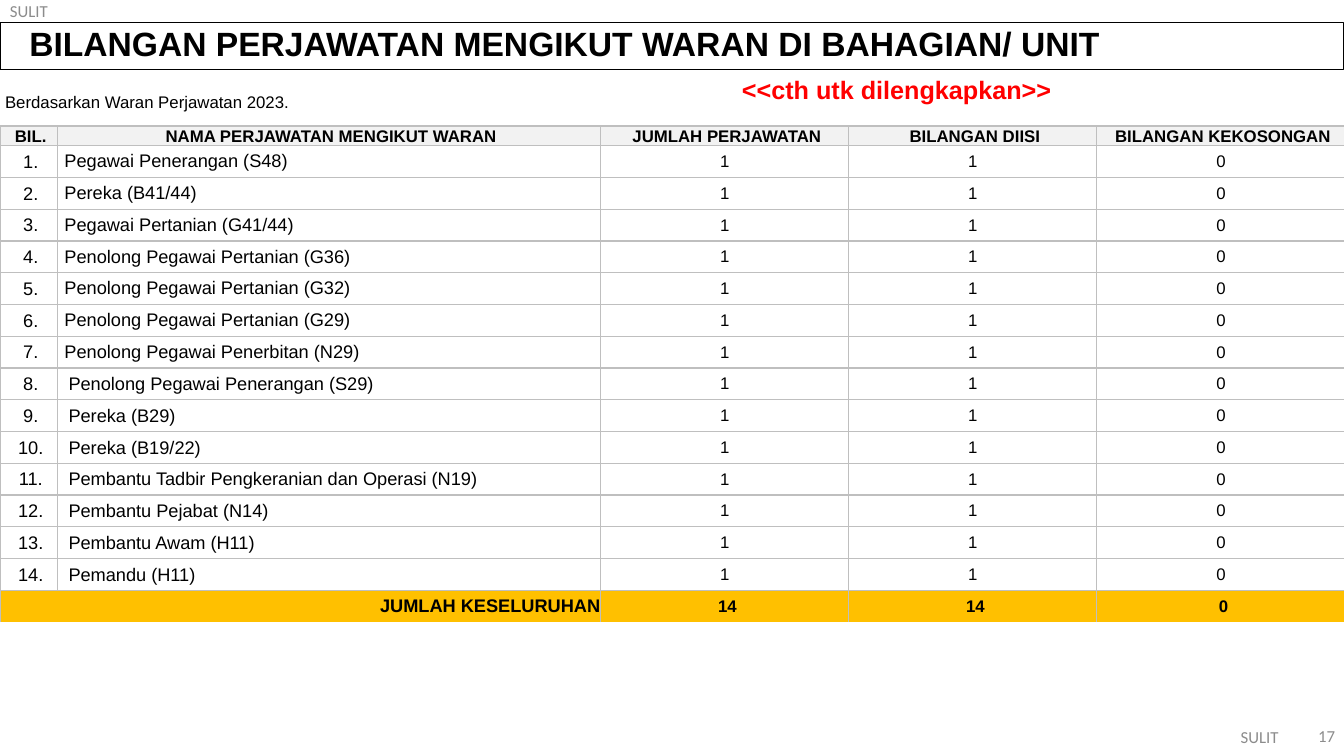
from dataclasses import dataclass, field, replace
from typing import Any

from lxml.etree import SubElement, Element
from pptx import Presentation
from pptx.dml.color import RGBColor as RGB
from pptx.enum.text import MSO_ANCHOR as Anchor, MSO_AUTO_SIZE as AutoSize, PP_ALIGN as Align
from pptx.oxml.ns import qn
from pptx.util import Inches, Pt


@dataclass(frozen=True)
class Theme:
    body_font: str = "Arial"
    mark_font: str = "Calibri"
    black: str = "000000"
    grey: str = "8C8C8C"
    red: str = "FF0000"
    border: str = "BFBFBF"
    white: str = "FFFFFF"
    header_fill: str = "F2F2F2"
    total_fill: str = "FFC000"
    title_size: int = 24
    note_size: int = 18
    name_size: int = 13
    text_size: int = 12


THEME = Theme()


@dataclass(frozen=True)
class TextStyle:
    size: int = THEME.text_size
    font: str = THEME.body_font
    color: str = THEME.black
    bold: bool = False
    align: Align = Align.LEFT
    indent: float = 0
    line_spacing: float = 1.0


@dataclass(frozen=True)
class CellStyle:
    text: TextStyle = field(default_factory=TextStyle)
    margins: tuple[float, float, float, float] = (0.01, 0.01, 0.01, 0)
    anchor: Anchor = Anchor.MIDDLE
    fill: str | None = None
    borders: str = "LRTB"


@dataclass(frozen=True)
class Label:
    text: str
    left: float
    top: float
    width: float
    height: float
    style: TextStyle
    anchor: Anchor = Anchor.MIDDLE


@dataclass(frozen=True)
class Post:
    name: str
    total: int = 1
    filled: int = 1

    @property
    def vacant(self) -> int:
        return self.total - self.filled


SLIDE_W, SLIDE_H = 13.33, 7.5
TABLE_TOP, TABLE_H = 0.78, 5.39
NOTE_ROW_H, HEADER_ROW_H = 0.47, 0.19
COL_WIDTHS = (0.57, 5.39, 2.46, 2.46, 2.46)
HANGING_FROM = 8

MARK = TextStyle(font=THEME.mark_font, color=THEME.grey)
MARK_RIGHT = replace(MARK, align=Align.RIGHT)
LABELS = (
    Label("SULIT", 12.07, 7.11, 0.71, 0.4, MARK_RIGHT),
    Label("SULIT", 0, 0, 0.71, 0.22, MARK),
    Label("17", 12.78, 7.1, 0.56, 0.4, MARK_RIGHT),
    Label("<<cth utk dilengkapkan>>", 7.26, 0.69, 5.19, 0.4,
          TextStyle(size=THEME.note_size, color=THEME.red, bold=True), Anchor.TOP),
)
HEADERS = ("BIL.", "NAMA PERJAWATAN MENGIKUT WARAN", "JUMLAH PERJAWATAN",
           "BILANGAN DIISI", "BILANGAN KEKOSONGAN")
POSTS = tuple(Post(name) for name in (
    "Pegawai Penerangan (S48)",
    "Pereka (B41/44)",
    "Pegawai Pertanian (G41/44)",
    "Penolong Pegawai Pertanian (G36)",
    "Penolong Pegawai Pertanian (G32)",
    "Penolong Pegawai Pertanian (G29)",
    "Penolong Pegawai Penerbitan (N29)",
    "Penolong Pegawai Penerangan (S29)",
    "Pereka (B29)",
    "Pereka (B19/22)",
    "Pembantu Tadbir Pengkeranian dan Operasi (N19)",
    "Pembantu Pejabat (N14)",
    "Pembantu Awam (H11)",
    "Pemandu (H11)",
))

WIDE = (0.07, 0, 0.07, 0)
CENTRED = TextStyle(align=Align.CENTER, indent=0.04)
NOTE = CellStyle(TextStyle(indent=0.04), fill=THEME.white, borders="B")
HEADER = CellStyle(replace(CENTRED, bold=True), anchor=Anchor.TOP, fill=THEME.header_fill)
NUMBER = CellStyle(replace(CENTRED, size=THEME.name_size))
NAME = CellStyle(TextStyle(size=THEME.name_size), WIDE)
NAME_HANGING = CellStyle(TextStyle(size=THEME.name_size, indent=0.1))
COUNT = CellStyle(TextStyle(align=Align.CENTER), WIDE)
TOTAL_BLANK = CellStyle(fill=THEME.total_fill, borders="LT")
TOTAL_NAME = CellStyle(TextStyle(THEME.name_size, bold=True, align=Align.RIGHT, indent=0.1),
                       fill=THEME.total_fill, borders="RT")
TOTAL_COUNT = CellStyle(TextStyle(bold=True, align=Align.CENTER, indent=0.05), WIDE,
                        fill=THEME.total_fill, borders="LRT")


def apply(obj: Any, values: dict[str, Any]) -> None:
    for name, value in values.items():
        setattr(obj, name, value)


def write(tf: Any, text: str, style: TextStyle) -> None:
    p = tf.paragraphs[0]
    apply(p, {"alignment": style.align, "line_spacing": style.line_spacing})
    apply(p._p.get_or_add_pPr(), {})
    p._p.get_or_add_pPr().set("marL", str(Inches(style.indent)))
    p._p.get_or_add_pPr().set("indent", "0")
    if text:
        r = p.add_run()
        r.text = text
        apply(r.font, {"size": Pt(style.size), "name": style.font, "bold": style.bold})
        r.font.color.rgb = RGB.from_string(style.color)


def set_borders(cell: Any, sides: str) -> None:
    tc_pr = cell._tc.get_or_add_tcPr()
    for i, side in enumerate("LRTB"):
        ln = Element(qn(f"a:ln{side}"), w=str(Pt(1)))
        if side in sides:
            fill = SubElement(ln, qn("a:solidFill"))
            SubElement(fill, qn("a:srgbClr"), val=THEME.border)
        else:
            SubElement(ln, qn("a:noFill"))
        tc_pr.insert(i, ln)


def fill_cell(cell: Any, text: str, style: CellStyle) -> None:
    left, top, right, bottom = map(Inches, style.margins)
    apply(cell, {"margin_left": left, "margin_top": top, "margin_right": right,
                 "margin_bottom": bottom, "vertical_anchor": style.anchor})
    if style.fill:
        cell.fill.solid()
        cell.fill.fore_color.rgb = RGB.from_string(style.fill)
    else:
        cell.fill.background()
    set_borders(cell, style.borders)
    write(cell.text_frame, text, style.text)


def add_title(s: Any, text: str) -> None:
    sp = s.shapes.title
    apply(sp, {"left": 0, "top": Inches(0.22), "width": Inches(SLIDE_W), "height": Inches(0.47)})
    sp.line.color.rgb = RGB.from_string(THEME.black)
    sp.line.width = Pt(0.75)
    apply(sp.text_frame, {"vertical_anchor": Anchor.MIDDLE, "word_wrap": True,
                          "auto_size": AutoSize.NONE})
    write(sp.text_frame, text, TextStyle(THEME.title_size, bold=True, indent=0.19, line_spacing=0.9))


def add_label(s: Any, label: Label) -> None:
    box = map(Inches, (label.left, label.top, label.width, label.height))
    tf = s.shapes.add_textbox(*box).text_frame
    apply(tf, {"word_wrap": True, "vertical_anchor": label.anchor})
    write(tf, label.text, label.style)


def table_rows() -> list[list[tuple[str, CellStyle]]]:
    rows = [[("Berdasarkan Waran Perjawatan 2023.", NOTE)], [(text, HEADER) for text in HEADERS]]
    for n, post in enumerate(POSTS, 1):
        counts = (post.total, post.filled, post.vacant)
        name_style = NAME if n < HANGING_FROM else NAME_HANGING
        rows.append([(f"{n}.", NUMBER), (post.name, name_style), *((str(c), COUNT) for c in counts)])
    sums = (sum(getattr(post, key) for post in POSTS) for key in ("total", "filled", "vacant"))
    rows.append([("", TOTAL_BLANK), ("JUMLAH KESELURUHAN", TOTAL_NAME),
                 *((str(c), TOTAL_COUNT) for c in sums)])
    return rows


def add_posts_table(s: Any) -> None:
    rows = table_rows()
    box = map(Inches, (0, TABLE_TOP, SLIDE_W, TABLE_H))
    table = s.shapes.add_table(len(rows), len(COL_WIDTHS), *box).table
    apply(table, {"first_row": False, "horz_banding": False})
    for col, width in zip(table.columns, COL_WIDTHS):
        col.width = Inches(width)
    row_h = (TABLE_H - NOTE_ROW_H - HEADER_ROW_H) / (len(rows) - 2)
    for row, height in zip(table.rows, [NOTE_ROW_H, HEADER_ROW_H] + [row_h] * (len(rows) - 2)):
        row.height = Inches(height)
    table.cell(0, 0).merge(table.cell(0, len(COL_WIDTHS) - 1))
    for i, cells in enumerate(rows):
        for j, (text, style) in enumerate(cells):
            fill_cell(table.cell(i, j), text, style)


def main() -> None:
    prs = Presentation()
    apply(prs, {"slide_width": Inches(SLIDE_W), "slide_height": Inches(SLIDE_H)})
    s = prs.slides.add_slide(prs.slide_layouts[5])
    add_title(s, "BILANGAN PERJAWATAN MENGIKUT WARAN DI BAHAGIAN/ UNIT")
    add_posts_table(s)
    for label in LABELS:
        add_label(s, label)
    prs.save("out.pptx")


if __name__ == "__main__":
    main()
